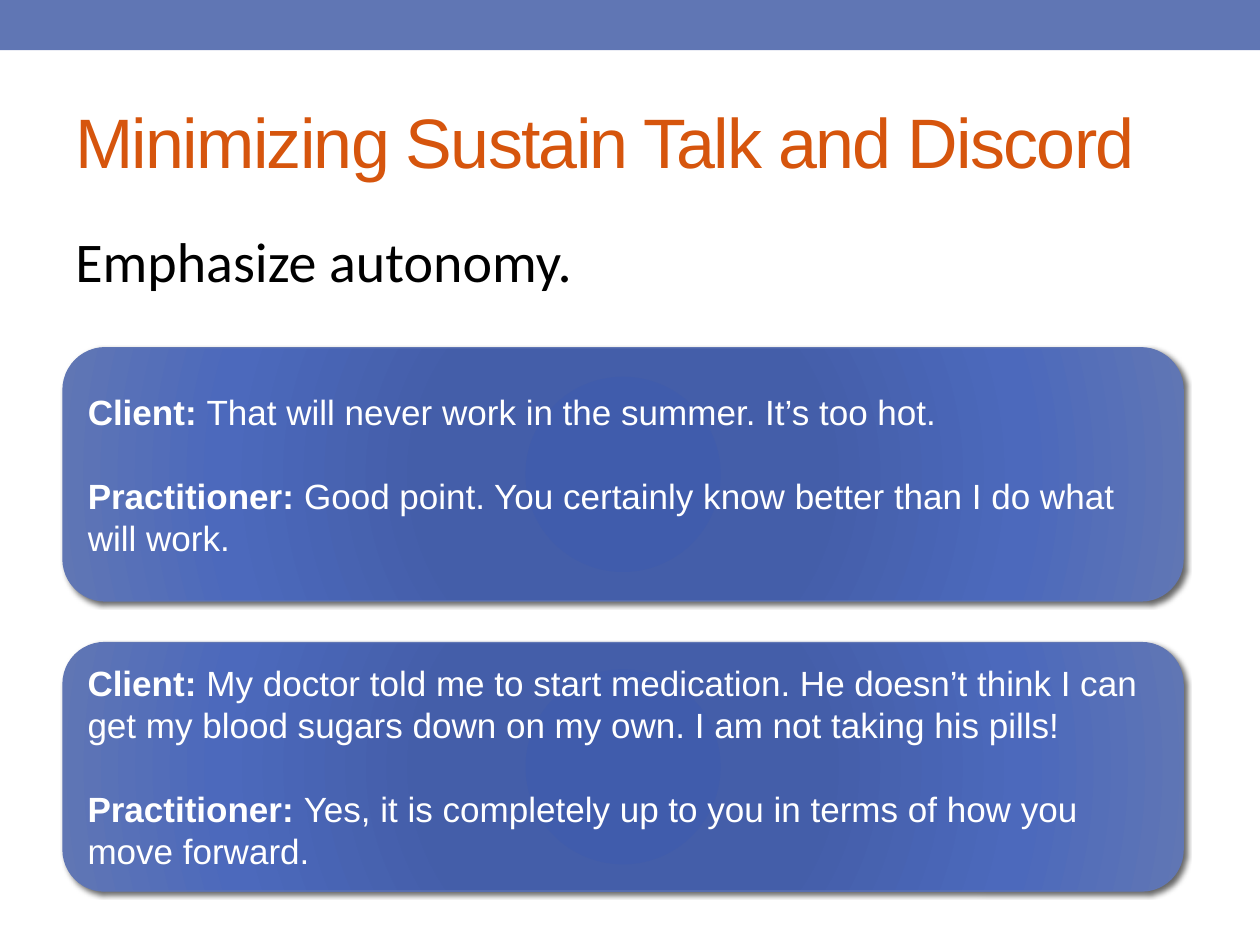
"""Build a slide on emphasizing autonomy, with two sample dialogues."""
from typing import NamedTuple

from lxml import etree
from pptx import Presentation
from pptx.dml.color import RGBColor
from pptx.enum.shapes import MSO_SHAPE
from pptx.enum.text import MSO_ANCHOR, PP_ALIGN
from pptx.oxml import parse_xml
from pptx.oxml.ns import nsdecls, qn
from pptx.util import Inches, Pt

RECT, ROUND = MSO_SHAPE.RECTANGLE, MSO_SHAPE.ROUNDED_RECTANGLE
MIDDLE, TOP, LEFT = MSO_ANCHOR.MIDDLE, MSO_ANCHOR.TOP, PP_ALIGN.LEFT
WIDE, HIGH = Inches(10), Inches(7.5)
MARGIN = 0.05
COLORS = {"bar": "6076B4", "title": "D6550D", "body": "000000",
          "text": "FFFFFF", "shade": "000000"}
STOPS = {0: "405CAC", 34: "445EA9", 70: "4C69BC", 100: COLORS["bar"]}


class Box(NamedTuple):
    left: float
    top: float
    width: float
    height: float


class Style(NamedTuple):
    size: int
    font: str
    color: str


class Label(NamedTuple):
    text: str
    box: Box
    style: Style
    anchor: MSO_ANCHOR
    track: int


class Card(NamedTuple):
    box: Box
    client: str
    reply: str


SPEECH = Style(20, "Arial", "text")
LABELS = [
    Label("Minimizing Sustain Talk and Discord", Box(MARGIN, 0.077, 0.9, 0.144),
          Style(40, "Arial", "title"), MIDDLE, -100),
    Label("Emphasize autonomy.", Box(MARGIN, 0.233, 0.9, 0.711),
          Style(32, "Calibri", "body"), TOP, 0),
]
CARDS = [
    Card(Box(MARGIN, 0.368, 0.889, 0.268),
         "That will never work in the summer. It’s too hot.",
         "Good point. You certainly know better than I do what will work."),
    Card(Box(MARGIN, 0.68, 0.889, 0.263),
         "My doctor told me to start medication. He doesn’t think I can get "
         "my blood sugars down on my own. I am not taking his pills!",
         "Yes, it is completely up to you in terms of how you move forward."),
]


def place(box: Box) -> tuple:
    """Turn shares of the slide into lengths."""
    return (int(box.left * WIDE), int(box.top * HIGH),
            int(box.width * WIDE), int(box.height * HIGH))


def add_run(para, text: str, style: Style, bold: bool = False):
    """Add one styled run to a paragraph."""
    run = para.add_run()
    run.text = text
    font = run.font
    font.size, font.name, font.bold = Pt(style.size), style.font, bold
    font.color.rgb = RGBColor.from_string(COLORS[style.color])
    return run


def add_shape(slide, kind: MSO_SHAPE, box: Box):
    """Add a flat shape in the bar colour."""
    shape = slide.shapes.add_shape(kind, *place(box))
    shape.shadow.inherit = False
    shape.fill.solid()
    shape.fill.fore_color.rgb = RGBColor.from_string(COLORS["bar"])
    shape.line.fill.background()
    return shape


def add_label(slide, label: Label) -> None:
    """Add a line of plain text."""
    frame = slide.shapes.add_textbox(*place(label.box)).text_frame
    frame.word_wrap, frame.vertical_anchor = True, label.anchor
    run = add_run(frame.paragraphs[0], label.text, label.style)
    run.font._element.set("spc", str(label.track))


def add_glow(shape) -> None:
    """Give a shape a radial gradient and a soft shadow."""
    props = shape._element.spPr
    stops = "".join(
        f'<a:gs pos="{pos * 1000}"><a:srgbClr val="{color}"/></a:gs>'
        for pos, color in STOPS.items())
    props.replace(props.find(qn("a:solidFill")), parse_xml(
        f'<a:gradFill {nsdecls("a")} rotWithShape="1"><a:gsLst>{stops}</a:gsLst>'
        '<a:path path="circle"><a:fillToRect l="100000" t="100000" '
        'r="100000" b="100000"/></a:path></a:gradFill>'))
    shade = etree.SubElement(
        props.find(qn("a:effectLst")), qn("a:outerShdw"),
        blurRad=str(Pt(3)), dist=str(Pt(2)), dir="2700000", rotWithShape="0")
    color = etree.SubElement(shade, qn("a:srgbClr"), val=COLORS["shade"])
    etree.SubElement(color, qn("a:alpha"), val="60000")


def add_card(slide, card: Card) -> None:
    """Add a rounded card with a client line and a reply."""
    shape = add_shape(slide, ROUND, card.box)
    shape.line.color.rgb = RGBColor.from_string(COLORS["bar"])
    shape.line.width = Pt(0.75)
    add_glow(shape)
    frame = shape.text_frame
    frame.word_wrap, frame.vertical_anchor = True, MIDDLE
    first, second = frame.paragraphs[0], frame.add_paragraph()
    second.space_before = Pt(24)
    for para, name, words in ((first, "Client: ", card.client),
                              (second, "Practitioner: ", card.reply)):
        para.alignment, para.line_spacing = LEFT, Pt(24)
        add_run(para, name, SPEECH, True)
        add_run(para, words, SPEECH)


def main() -> None:
    """Draw and save the slide."""
    deck = Presentation()
    deck.slide_width, deck.slide_height = WIDE, HIGH
    slide = deck.slides.add_slide(deck.slide_layouts[6])
    add_shape(slide, RECT, Box(0, 0, 1, 0.053))
    for label in LABELS:
        add_label(slide, label)
    for card in CARDS:
        add_card(slide, card)
    deck.save("out.pptx")


if __name__ == "__main__":
    main()
